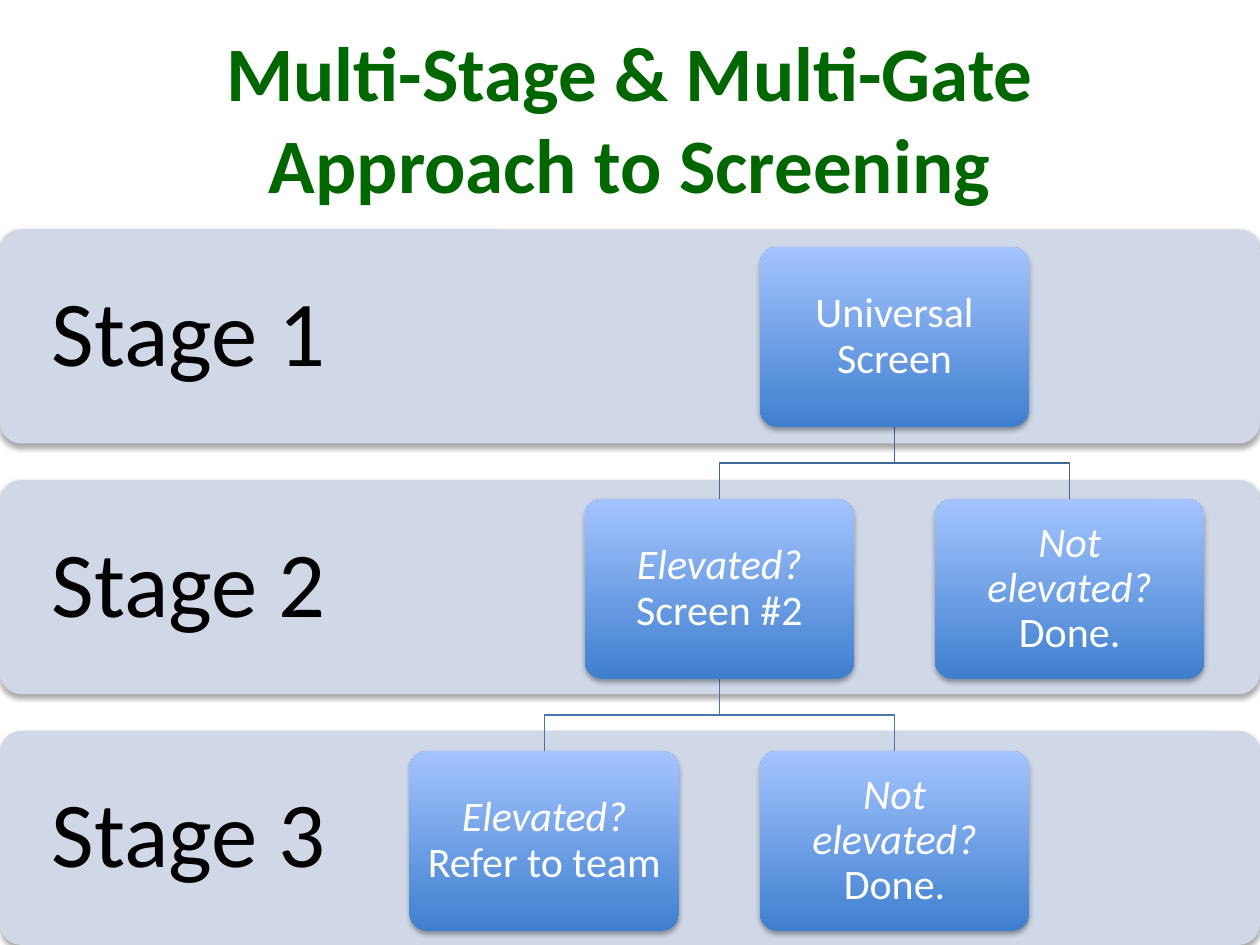
import pptx
import pptx.dml.color
import pptx.enum.shapes
import pptx.enum.text
import pptx.util
from lxml import etree
from pptx.util import Inches

COLORS = {
    "title": "006600", "band": "D0D8E8", "label": "000000",
    "box_bottom": "3F7FCE", "box_top": "A4C4FF", "box_text": "FFFFFF",
    "upper_branch": "3F6797", "lower_branch": "4875AC",
}
SHADOW = (
    '<a:outerShdw xmlns:a="http://schemas.openxmlformats.org/drawingml/2006/main" '
    'blurRad="39370" dist="22860" dir="5400000" rotWithShape="0">'
    '<a:srgbClr val="000000"><a:alpha val="35000"/></a:srgbClr></a:outerShdw>'
)


def rgb(name):
    return pptx.dml.color.RGBColor.from_string(COLORS[name])


def add_panel(left, top, width, height):
    """Add a rounded panel without outline and with a soft shadow."""
    panel = slide.shapes.add_shape(
        pptx.enum.shapes.MSO_SHAPE.ROUNDED_RECTANGLE,
        Inches(left), Inches(top), Inches(width), Inches(height))
    panel.adjustments[0] = 0.1
    panel.line.fill.background()
    panel.shadow.inherit = False
    effects = panel.element.spPr.find(pptx.oxml.ns.qn("a:effectLst"))
    effects.append(etree.fromstring(SHADOW))
    return panel


def format_text(shape, size, color, margin):
    """Center the text of a shape and set its font and margins."""
    frame = shape.text_frame
    frame.word_wrap = True
    frame.vertical_anchor = pptx.enum.text.MSO_ANCHOR.MIDDLE
    frame.margin_left = frame.margin_right = Inches(margin)
    frame.margin_top = frame.margin_bottom = Inches(margin)
    paragraph = frame.paragraphs[0]
    paragraph.alignment = pptx.enum.text.PP_ALIGN.CENTER
    paragraph.line_spacing = 0.9
    paragraph.font.name = "Calibri"
    paragraph.font.size = pptx.util.Pt(size)
    paragraph.font.color.rgb = rgb(color)
    return paragraph


presentation = pptx.Presentation()
presentation.slide_width = Inches(10)
presentation.slide_height = Inches(7.5)
slide = presentation.slides.add_slide(presentation.slide_layouts[5])

# Title
title = slide.shapes.title
title.left, title.top = Inches(0.5), Inches(0.3)
title.width, title.height = Inches(9), Inches(1.25)
title.text_frame.text = "Multi-Stage & Multi-Gate Approach to Screening"
heading = format_text(title, 44, "title", 0.1)
heading.line_spacing = 1.0
heading.font.bold = True

# Stage bands with their labels
for stage in range(3):
    band_top = 1.82 + 1.99 * stage
    band = add_panel(0, band_top, 10, 1.7)
    band.fill.solid()
    band.fill.fore_color.rgb = rgb("band")
    label = slide.shapes.add_textbox(0, Inches(band_top), Inches(3), Inches(1.7))
    label.text_frame.text = f"Stage {stage + 1}"
    format_text(label, 53, "label", 0.41)

# Decision tree: each step is centered at a number of half gaps from the root
ROOT_X, HALF_GAP = 7.1, 1.39
FIRST_TOP, ROW_PITCH = 1.96, 2
BOX_WIDTH, BOX_HEIGHT = 2.14, 1.43

# Branches: row of the parent, offset of the parent, colour
branches = [(0, 0, "upper_branch"), (1, -1, "lower_branch")]
for row, offset, color in branches:
    start_x = ROOT_X + HALF_GAP * offset
    start_y = FIRST_TOP + ROW_PITCH * row + BOX_HEIGHT
    end_y = FIRST_TOP + ROW_PITCH * (row + 1)
    middle_y = (start_y + end_y) / 2
    for side in (-1, 1):
        end_x = start_x + HALF_GAP * side
        builder = slide.shapes.build_freeform(Inches(start_x), Inches(start_y))
        corners = [(start_x, middle_y), (end_x, middle_y), (end_x, end_y)]
        builder.add_line_segments(
            [(Inches(x), Inches(y)) for x, y in corners], close=False)
        branch = builder.convert_to_shape()
        branch.fill.background()
        branch.line.color.rgb = rgb(color)
        branch.line.width = pptx.util.Pt(0.75)
        branch.shadow.inherit = False

# Steps: row, offset, question in italics, action
steps = [
    (0, 0, "", "Universal Screen"),
    (1, -1, "Elevated? ", "Screen #2"),
    (2, -2, "Elevated? ", "Refer to team"),
    (2, 0, "Not elevated? ", "Done."),
    (1, 1, "Not elevated? ", "Done."),
]
for row, offset, question, action in steps:
    box = add_panel(ROOT_X + HALF_GAP * offset - BOX_WIDTH / 2,
                    FIRST_TOP + ROW_PITCH * row, BOX_WIDTH, BOX_HEIGHT)
    box.fill.gradient()
    box.fill.gradient_angle = 90
    for stop, color in zip(box.fill.gradient_stops, ("box_bottom", "box_top")):
        stop.color.rgb = rgb(color)
    paragraph = format_text(box, 24, "box_text", 0.1)
    if question:
        question_run = paragraph.add_run()
        question_run.text = question
        question_run.font.italic = True
    paragraph.add_run().text = action

presentation.save("out.pptx")
